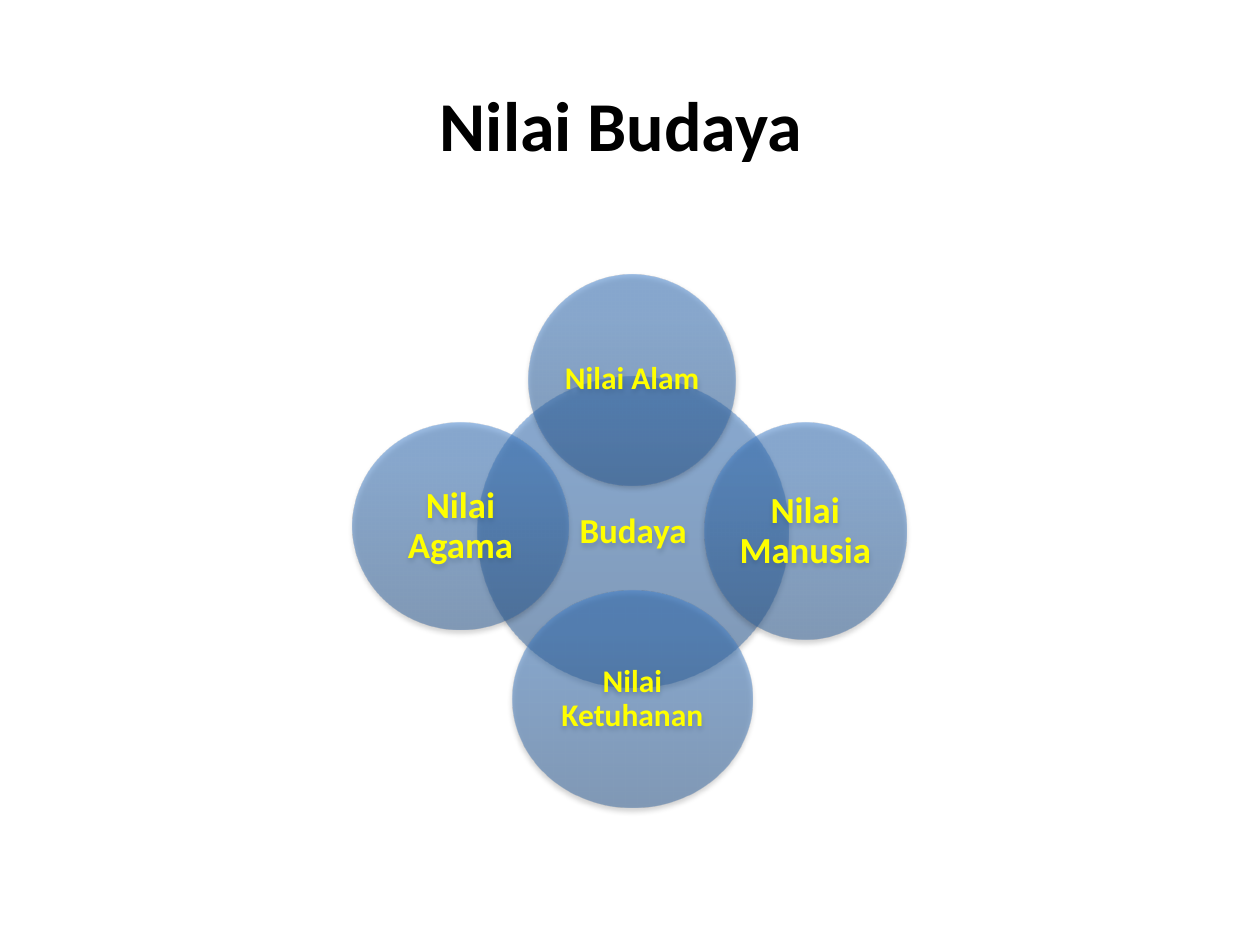
from lxml.etree import SubElement as Sub
from pptx import Presentation
from pptx.dml.color import RGBColor as RGB
from pptx.enum.shapes import MSO_SHAPE as Shape
from pptx.enum.text import MSO_ANCHOR as Anchor, MSO_AUTO_SIZE as Auto, PP_ALIGN as Align
from pptx.oxml.ns import qn
from pptx.util import Cm, Pt

BLACK = RGB(0x00, 0x00, 0x00)
YELLOW = RGB(0xFF, 0xFF, 0x00)
DEEP = RGB(0x2F, 0x5F, 0x99)
BLUE = RGB(0x3D, 0x7C, 0xC7)
LIGHT = RGB(0x3A, 0x7C, 0xCB)
STOPS = ((0, DEEP), (80, BLUE), (100, LIGHT))
RINGS = (
    ("Budaya", 20, (9.63, 7.59, 6.27, 6.27)),
    ("Nilai Alam", 18, (10.66, 5.53, 4.17, 4.25)),
    ("Nilai Manusia", 21, (14.2, 8.53, 4.07, 4.37)),
    ("Nilai Ketuhanan", 18, (10.33, 11.91, 4.84, 4.37)),
    ("Nilai Agama", 21, (7.11, 8.53, 4.35, 4.17)),
)


class Deck:
    """Hold the style and the current slide."""

    font = "Calibri"
    inset = Cm(0.08)

    def __init__(self, show):
        self.slide = show.slides.add_slide(show.slide_layouts[5])

    def label(self, frame, text, size, color):
        para = frame.paragraphs[0]
        para.alignment = Align.CENTER
        run = para.add_run()
        run.text = text
        font = run.font
        font.name, font.size, font.bold = self.font, Pt(size), True
        font.color.rgb = color
        return para

    def title(self, text, size, box):
        head = self.slide.shapes.title
        head.left, head.top, head.width, head.height = map(Cm, box)
        frame = head.text_frame
        frame.word_wrap = False
        frame.auto_size = Auto.SHAPE_TO_FIT_TEXT
        frame.vertical_anchor = Anchor.TOP
        self.label(frame, text, size, BLACK)

    def tint(self, node, color, alpha):
        tone = Sub(node, qn("a:srgbClr"), val=str(color))
        Sub(tone, qn("a:alpha"), val=str(alpha * 1000))

    def paint(self, shape):
        shape.line.fill.background()
        shape.shadow.inherit = False
        props = shape._element.spPr
        grad = Sub(props, qn("a:gradFill"), rotWithShape="1")
        stops = Sub(grad, qn("a:gsLst"))
        for pos, color in STOPS:
            self.tint(Sub(stops, qn("a:gs"), pos=str(pos * 1000)), color, 50)
        Sub(grad, qn("a:lin"), ang="16200000", scaled="0")
        props.find(qn("a:ln")).addprevious(grad)
        shade = Sub(props.find(qn("a:effectLst")), qn("a:outerShdw"),
                    blurRad="40000", dist="23000", dir="5400000", rotWithShape="0")
        self.tint(shade, BLACK, 35)

    def ring(self, text, size, box):
        shape = self.slide.shapes.add_shape(Shape.OVAL, *map(Cm, box))
        self.paint(shape)
        frame = shape.text_frame
        frame.word_wrap = True
        frame.vertical_anchor = Anchor.MIDDLE
        frame.margin_left = frame.margin_right = self.inset
        frame.margin_top = frame.margin_bottom = self.inset
        self.label(frame, text, size, YELLOW).line_spacing = 0.9


def main():
    show = Presentation()
    show.slide_width, show.slide_height = Cm(25.4), Cm(19.05)
    deck = Deck(show)
    for ring in RINGS:
        deck.ring(*ring)
    deck.title("Nilai Budaya ", 40, (8.56, 1.52, 8.23, 1.96))
    show.save("out.pptx")


if __name__ == "__main__":
    main()
